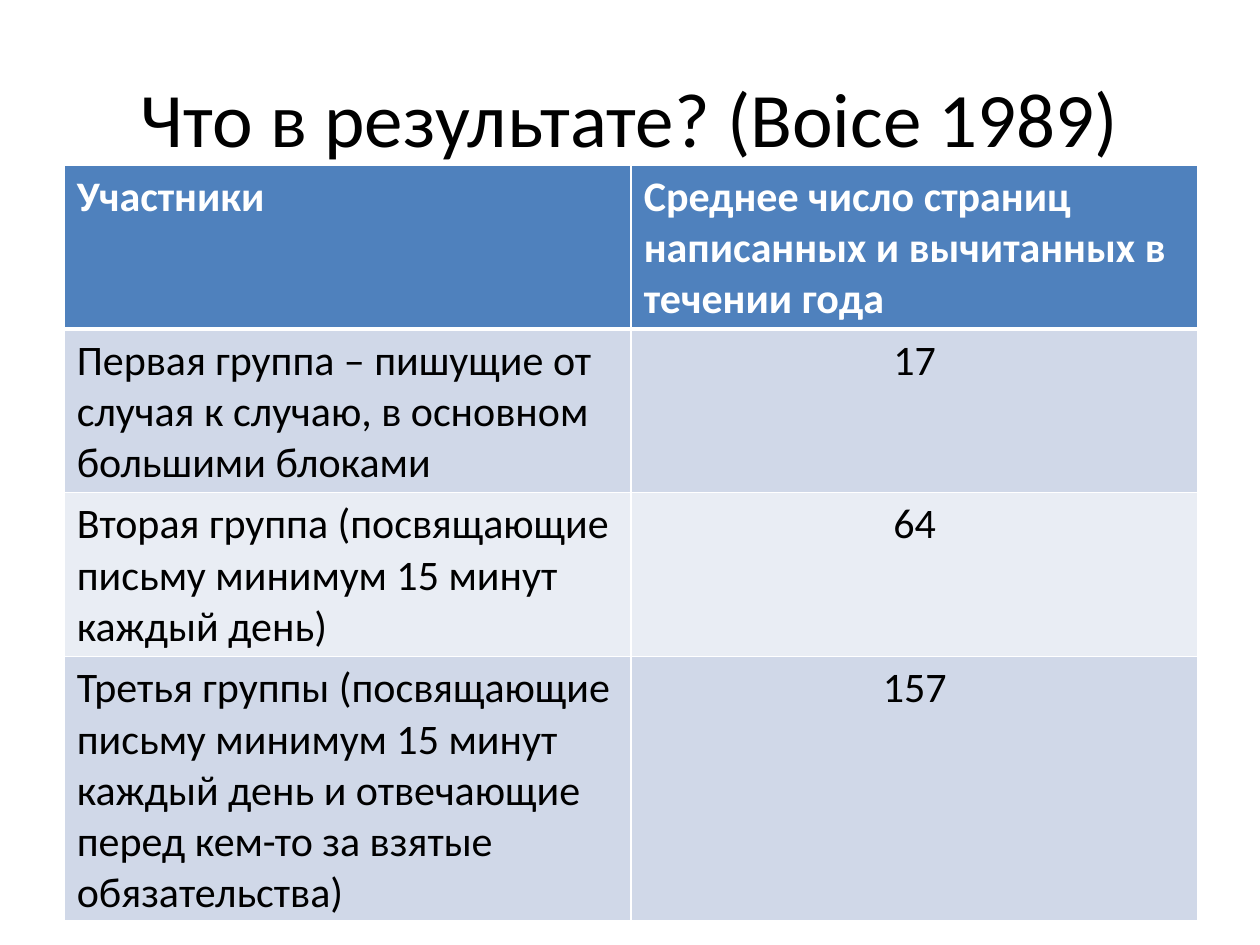
from lxml.etree import SubElement
from pptx import Presentation
from pptx.dml.color import RGBColor
from pptx.enum.text import MSO_ANCHOR, PP_ALIGN
from pptx.oxml.ns import qn
from pptx.util import Inches, Pt

FONT = "Calibri"
BLACK = RGBColor(0x00, 0x00, 0x00)
WHITE = RGBColor(0xFF, 0xFF, 0xFF)
HEADER_BLUE = RGBColor(0x4F, 0x81, 0xBD)
BAND_DARK = RGBColor(0xD0, 0xD8, 0xE8)
BAND_LIGHT = RGBColor(0xE9, 0xED, 0xF4)

TITLE = "Что в результате? (Boice 1989)"
ROWS = [
    ("Участники", "Среднее число страниц написанных и вычитанных в течении года"),
    ("Первая группа – пишущие от случая к случаю, в основном большими блоками", "17"),
    ("Вторая группа (посвящающие письму минимум 15 минут каждый день)", "64"),
    ("Третья группы (посвящающие письму минимум 15 минут каждый день "
     "и отвечающие перед кем-то за взятые обязательства)", "157"),
]
ROW_HEIGHTS = [1.3, 1.3, 1.3, 2.1]


def style_paragraph(paragraph, size, color, bold=False, alignment=PP_ALIGN.LEFT):
    paragraph.alignment = alignment
    font = paragraph.font
    font.name = FONT
    font.size = Pt(size)
    font.bold = bold
    font.color.rgb = color


def add_title(slide):
    shape = slide.shapes.add_textbox(Inches(0.5), Inches(0.3), Inches(9), Inches(1.25))
    frame = shape.text_frame
    frame.word_wrap = True
    frame.vertical_anchor = MSO_ANCHOR.MIDDLE
    frame.text = TITLE
    style_paragraph(frame.paragraphs[0], 44, BLACK, alignment=PP_ALIGN.CENTER)


def set_borders(cell, bottom_width):
    properties = cell._tc.get_or_add_tcPr()
    widths = {"a:lnL": 1, "a:lnR": 1, "a:lnT": 1, "a:lnB": bottom_width}
    for position, (tag, width) in enumerate(widths.items()):
        line = SubElement(properties, qn(tag), w=str(Pt(width)))
        fill = SubElement(line, qn("a:solidFill"))
        SubElement(fill, qn("a:srgbClr"), val=str(WHITE))
        properties.insert(position, line)


def fill_cell(cell, text, row_index, column_index):
    is_header = row_index == 0
    cell.text = text
    cell.fill.solid()
    if is_header:
        cell.fill.fore_color.rgb = HEADER_BLUE
    else:
        cell.fill.fore_color.rgb = BAND_DARK if row_index % 2 else BAND_LIGHT
    is_value = column_index == 1 and not is_header
    style_paragraph(
        cell.text_frame.paragraphs[0], 24,
        WHITE if is_header else BLACK,
        bold=is_header,
        alignment=PP_ALIGN.CENTER if is_value else PP_ALIGN.LEFT,
    )
    set_borders(cell, 3 if is_header else 1)


def add_results_table(slide):
    table = slide.shapes.add_table(
        len(ROWS), 2, Inches(0.51), Inches(1.31), Inches(9), Inches(6)
    ).table
    for row_index, (texts, height) in enumerate(zip(ROWS, ROW_HEIGHTS)):
        table.rows[row_index].height = Inches(height)
        for column_index, text in enumerate(texts):
            fill_cell(table.cell(row_index, column_index), text, row_index, column_index)


def main():
    presentation = Presentation()
    presentation.slide_width = Inches(10)
    presentation.slide_height = Inches(7.5)
    slide = presentation.slides.add_slide(presentation.slide_layouts[6])
    add_title(slide)
    add_results_table(slide)
    presentation.save("out.pptx")


if __name__ == "__main__":
    main()
